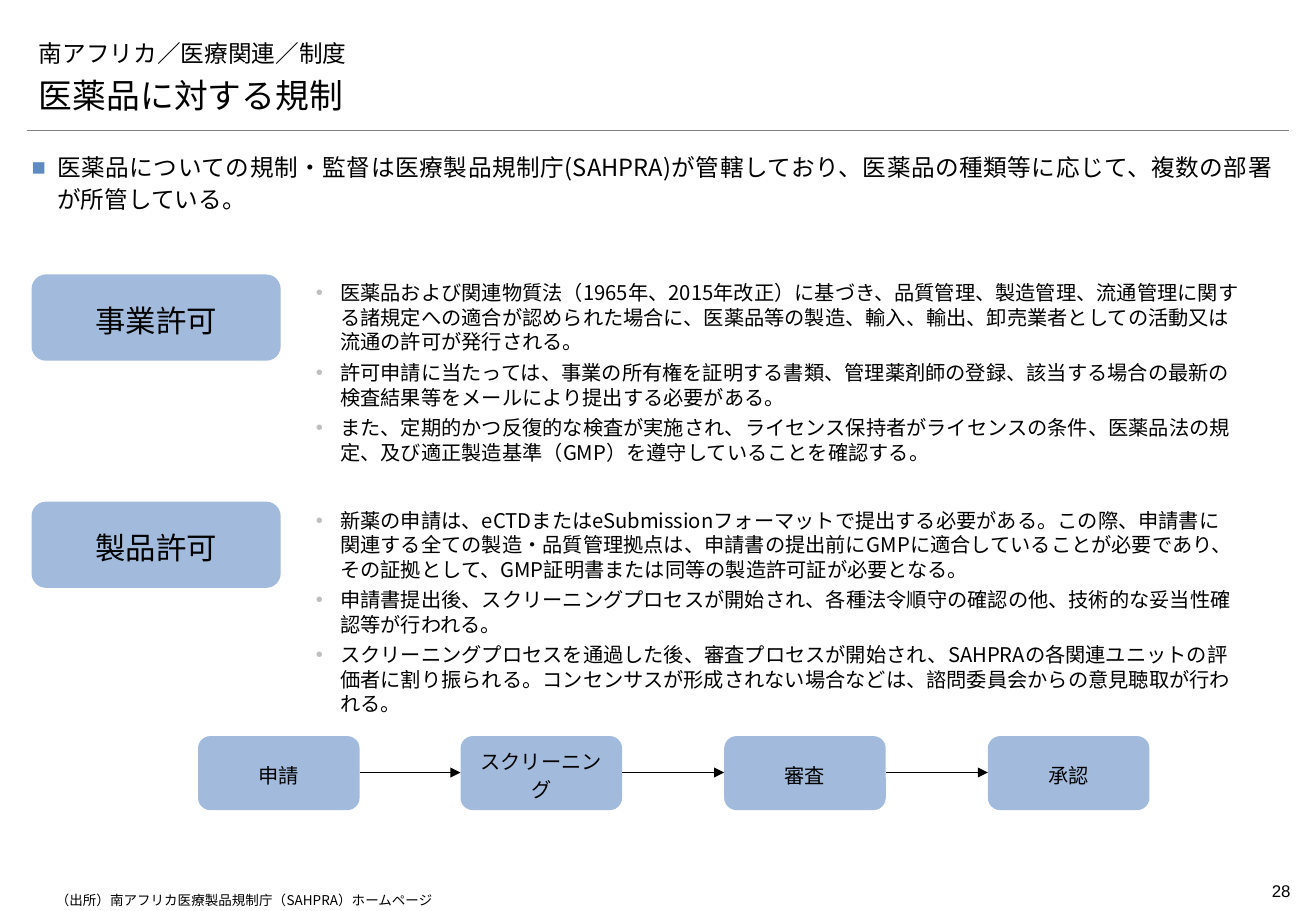
import pptx
import pptx.util
import pptx.dml.color
import pptx.enum.shapes
import pptx.enum.text
import pptx.oxml.ns
from dataclasses import dataclass
from lxml import etree

HEADING = "南アフリカ／医療関連／制度"
TOPIC = "医薬品に対する規制"
LEAD = ("医薬品についての規制・監督は医療製品規制庁(SAHPRA)が管轄しており、"
        "医薬品の種類等に応じて、複数の部署が所管している。")
PERMITS = [
    ("事業許可", 226, 164, [
        "医薬品および関連物質法（1965年、2015年改正）に基づき、品質管理、製造管理、流通管理に関する"
        "諸規定への適合が認められた場合に、医薬品等の製造、輸入、輸出、卸売業者としての活動又は"
        "流通の許可が発行される。",
        "許可申請に当たっては、事業の所有権を証明する書類、管理薬剤師の登録、該当する場合の最新の"
        "検査結果等をメールにより提出する必要がある。",
        "また、定期的かつ反復的な検査が実施され、ライセンス保持者がライセンスの条件、医薬品法の規定、"
        "及び適正製造基準（GMP）を遵守していることを確認する。",
    ]),
    ("製品許可", 413, 184, [
        "新薬の申請は、eCTDまたはeSubmissionフォーマットで提出する必要がある。この際、申請書に関連する"
        "全ての製造・品質管理拠点は、申請書の提出前にGMPに適合していることが必要であり、その証拠として、"
        "GMP証明書または同等の製造許可証が必要となる。",
        "申請書提出後、スクリーニングプロセスが開始され、各種法令順守の確認の他、技術的な妥当性確認等が"
        "行われる。",
        "スクリーニングプロセスを通過した後、審査プロセスが開始され、SAHPRAの各関連ユニットの評価者に"
        "割り振られる。コンセンサスが形成されない場合などは、諮問委員会からの意見聴取が行われる。",
    ]),
]
STEPS = ["申請", "スクリーニング", "審査", "承認"]
SOURCE = "（出所）南アフリカ医療製品規制庁（SAHPRA）ホームページ"
PAGE = "28"

Pt = pptx.util.Pt
Align = pptx.enum.text.PP_ALIGN
Anchor = pptx.enum.text.MSO_ANCHOR
qn = pptx.oxml.ns.qn


@dataclass(frozen=True)
class Theme:
    ink: str = "000000"
    box: str = "A2BBDC"
    rule: str = "7F7F7F"
    lead_bullet: str = "5F8AC3"
    list_bullet: str = "BFBFBF"
    japanese: str = "Noto Sans CJK JP"
    # Each style: font, size, line pitch, alignment
    heading: tuple = ("Montserrat", 14, None, Align.LEFT)
    topic: tuple = ("Montserrat", 20, None, Align.LEFT)
    lead: tuple = ("Noto Sans CJK JP", 14, 19, Align.JUSTIFY)
    points: tuple = ("Noto Sans CJK JP", 12, 14.5, Align.LEFT)
    permit: tuple = ("Arial", 18, 25, Align.CENTER)
    step: tuple = ("Arial", 12, 16.6, Align.CENTER)
    source: tuple = ("Noto Sans CJK JP", 8, 9.7, Align.LEFT)
    page: tuple = ("Arial", 10, None, Align.RIGHT)


THEME = Theme()


def px(length):
    """Turn px, 100 to the inch, into EMU."""
    return pptx.util.Emu(length * 9144)


def rgb(value):
    return pptx.dml.color.RGBColor.from_string(value)


def assign(target, values):
    for name, value in values.items():
        setattr(target, name, value)


def place(shape, left, top, width, height):
    assign(shape, {"left": px(left), "top": px(top),
                   "width": px(width), "height": px(height)})


def add_bullet(paragraph, char, color, indent):
    properties = paragraph._p.get_or_add_pPr()
    properties.set("marL", str(px(indent)))
    properties.set("indent", str(-px(indent)))
    fill = etree.SubElement(properties, qn("a:buClr"))
    etree.SubElement(fill, qn("a:srgbClr"), val=color)
    etree.SubElement(properties, qn("a:buFont"), typeface="Arial")
    etree.SubElement(properties, qn("a:buChar"), char=char)


def write(shape, lines, style, anchor=Anchor.TOP, bullet=None, gap=0, insets=(10, 5)):
    font, size, pitch, alignment = style
    across, down = map(px, insets)
    frame = shape.text_frame
    assign(frame, {"word_wrap": True, "auto_size": pptx.enum.text.MSO_AUTO_SIZE.NONE,
                   "vertical_anchor": anchor, "margin_left": across, "margin_right": across,
                   "margin_top": down, "margin_bottom": down})
    for index, line in enumerate(lines):
        paragraph = frame.add_paragraph() if index else frame.paragraphs[0]
        if bullet:
            add_bullet(paragraph, *bullet)
        assign(paragraph, {"alignment": alignment, "space_before": Pt(gap if index else 0),
                           "line_spacing": Pt(pitch) if pitch else 1.0})
        run = paragraph.add_run()
        run.text = line
        assign(run.font, {"name": font, "size": Pt(size), "bold": False})
        run.font.color.rgb = rgb(THEME.ink)
        etree.SubElement(run._r.get_or_add_rPr(), qn("a:ea"), typeface=THEME.japanese)


def add_box(slide, label, style, *area):
    box = slide.shapes.add_shape(pptx.enum.shapes.MSO_SHAPE.ROUNDED_RECTANGLE, *map(px, area))
    box.shadow.inherit = False
    box.fill.solid()
    box.fill.fore_color.rgb = rgb(THEME.box)
    box.line.fill.background()
    write(box, [label], style, Anchor.MIDDLE)


def add_line(slide, start, end, y, color, width, arrow=False):
    line = slide.shapes.add_connector(pptx.enum.shapes.MSO_CONNECTOR.STRAIGHT,
                                      px(start), px(y), px(end), px(y))
    line.line.color.rgb = rgb(color)
    line.line.width = Pt(width)
    if arrow:
        etree.SubElement(line.line._get_or_add_ln(), qn("a:tailEnd"), type="triangle")
    etree.SubElement(line._element.spPr, qn("a:effectLst"))


def add_note(slide, text, style, area, insets):
    write(slide.shapes.add_textbox(*map(px, area)), [text], style, insets=insets)


def add_steps(slide):
    first, last, top, width, height = 163, 813, 606, 133, 61
    lefts = [first + (last - first) * i // (len(STEPS) - 1) for i in range(len(STEPS))]
    for step, left in zip(STEPS, lefts):
        add_box(slide, step, THEME.step, left, top, width, height)
    for left, following in zip(lefts, lefts[1:]):
        add_line(slide, left + width, following, top + height // 2, THEME.ink, 0.75, arrow=True)


def main():
    deck = pptx.Presentation()
    assign(deck, {"slide_width": px(1083), "slide_height": px(750)})
    slide = deck.slides.add_slide(deck.slide_layouts.get_by_name("Comparison"))
    heading, topic, business, lead, product = slide.placeholders

    add_line(slide, 22, 1061, 107, THEME.rule, 0.25)
    place(heading, 22, 26, 1039, 34)
    write(heading, [HEADING], THEME.heading, Anchor.BOTTOM)
    place(topic, 22, 56, 1040, 44)
    write(topic, [TOPIC], THEME.topic, Anchor.BOTTOM)
    place(lead, 26, 123, 1021, 52)
    write(lead, [LEAD], THEME.lead, bullet=("■", THEME.lead_bullet, 21), insets=(0, 0))

    for details, (permit, top, height, points) in zip((business, product), PERMITS):
        add_box(slide, permit, THEME.permit, 26, top, 205, 71)
        place(details, 250, top, 780, height)
        write(details, points, THEME.points, bullet=("•", THEME.list_bullet, 20), gap=3.6)

    add_steps(slide)
    add_note(slide, SOURCE, THEME.source, (46, 734, 945, 16), (0, 0))
    add_note(slide, PAGE, THEME.page, (983, 720, 79, 27), (0, 5))
    deck.save("out.pptx")


if __name__ == "__main__":
    main()
